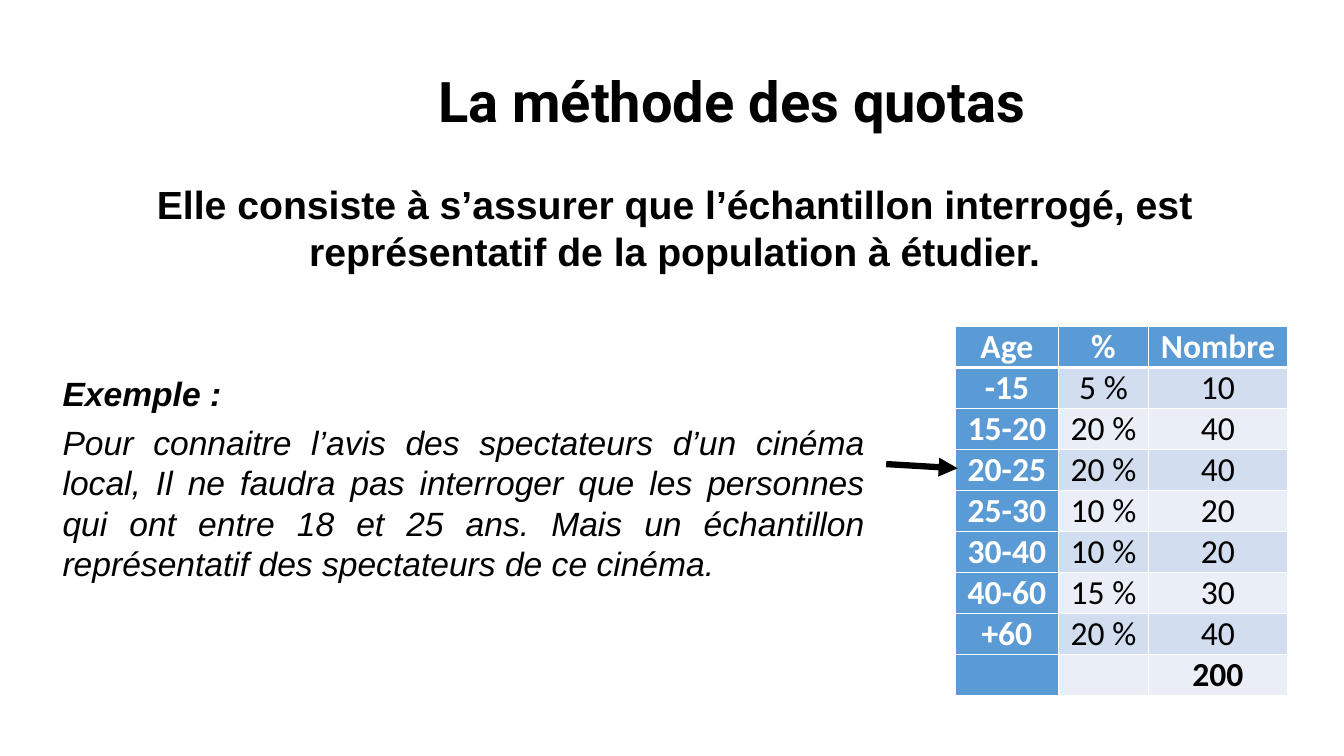
from lxml import etree
from pptx import Presentation
from pptx import util as u
from pptx.dml.color import RGBColor
from pptx.enum import shapes, text
from pptx.oxml.ns import qn

PX = 9525
BLACK, WHITE, BLUE = "000000", "FFFFFF", "5B9BD5"
BANDS = ["D2DEEF", "EAEFF7"]


def color(value):
    return RGBColor.from_string(value)


def write(paragraph, wording, alignment, font_color, **formats):
    paragraph.alignment = alignment
    run = paragraph.add_run()
    run.text = wording
    run.font.color.rgb = color(font_color)
    for name, value in formats.items():
        setattr(run.font, name, value)


presentation = Presentation()
presentation.slide_width = 1280 * PX
presentation.slide_height = 720 * PX
slide = presentation.slides.add_slide(presentation.slide_layouts[1])
center, justify = text.PP_ALIGN.CENTER, text.PP_ALIGN.JUSTIFY
middle = text.MSO_ANCHOR.MIDDLE

title = slide.shapes.title
definition = slide.shapes.add_textbox(0, 0, PX, PX)
example = slide.placeholders[1]
boxes = [
    (title, (214, 59, 979, 74), text.MSO_ANCHOR.TOP, 5),
    (definition, (92, 166, 1101, 132), middle, 36),
    (example, (50, 350, 783, 211), middle, 5),
]
for shape, place, anchor, bottom in boxes:
    shape.left, shape.top, shape.width, shape.height = [n * PX for n in place]
    frame = shape.text_frame
    formats = {"word_wrap": True, "vertical_anchor": anchor,
               "margin_bottom": bottom * PX, "auto_size": text.MSO_AUTO_SIZE.NONE}
    for name, value in formats.items():
        setattr(frame, name, value)

write(title.text_frame.paragraphs[0], "La méthode des quotas ", center, BLACK,
      name="Roboto", size=u.Pt(40), bold=True)
write(definition.text_frame.paragraphs[0],
      "Elle consiste à s’assurer que l’échantillon interrogé, "
      "est représentatif de la population à étudier.",
      center, BLACK, name="Arial", size=u.Pt(28), bold=True)

example_texts = [
    ("Exemple :", True, 0),
    ("Pour connaitre l’avis des spectateurs d’un cinéma local, "
     "Il ne faudra pas interroger que les personnes qui ont entre 18 et 25 ans. "
     "Mais un échantillon représentatif des spectateurs de ce cinéma.", False, 6),
]
example.text_frame.add_paragraph()
for paragraph, (wording, bold, before) in zip(example.text_frame.paragraphs, example_texts):
    properties = paragraph._p.get_or_add_pPr()
    properties.set("marL", "0")
    properties.set("indent", "0")
    etree.SubElement(properties, qn("a:buNone"))
    paragraph.space_before = u.Pt(before)
    write(paragraph, wording, justify, BLACK,
          name="Arial", size=u.Pt(24), bold=bold, italic=True)

quotas = [
    ("Age", "%", "Nombre"),
    ("-15", "5 %", "10"),
    ("15-20", "20 %", "40"),
    ("20-25", "20 %", "40"),
    ("25-30", "10 %", "20"),
    ("30-40", "10 %", "20"),
    ("40-60", "15 %", "30"),
    ("+60", "20 %", "40"),
    ("", "", "200"),
]
column_widths = [98, 86, 132]
row_height = 38
table = slide.shapes.add_table(
    len(quotas), len(column_widths), 910 * PX, 311 * PX,
    sum(column_widths) * PX, len(quotas) * row_height * PX).table
for column, width in zip(table.columns, column_widths):
    column.width = width * PX
for row_index, values in enumerate(quotas):
    table.rows[row_index].height = row_height * PX
    for column_index, value in enumerate(values):
        cell = table.cell(row_index, column_index)
        heading = row_index == 0 or column_index == 0
        total = row_index == len(quotas) - 1
        margins = {"margin_left": 7, "margin_right": 7, "margin_top": 0, "margin_bottom": 0}
        for name, margin in margins.items():
            setattr(cell, name, margin * PX)
        cell_properties = cell._tc.get_or_add_tcPr()
        for side in "LRTB":
            thick = (row_index, side) in [(0, "B"), (1, "T")]
            border = etree.SubElement(cell_properties, qn("a:ln" + side),
                                      w=str(u.Pt(3 if thick else 1)))
            border_fill = etree.SubElement(border, qn("a:solidFill"))
            etree.SubElement(border_fill, qn("a:srgbClr"), val=WHITE)
        cell.fill.solid()
        cell.fill.fore_color.rgb = color(BLUE if heading else BANDS[(row_index - 1) % 2])
        if value:
            write(cell.text_frame.paragraphs[0], value, center, WHITE if heading else BLACK,
                  name="Calibri", size=u.Pt(24), bold=heading or total)

arrow = slide.shapes.add_connector(
    shapes.MSO_CONNECTOR.STRAIGHT, 844 * PX, 442 * PX, 912 * PX, 446 * PX)
arrow.line.color.rgb = color(BLACK)
arrow.line.width = u.Pt(4.5)
etree.SubElement(arrow.line._get_or_add_ln(), qn("a:tailEnd"), type="triangle")
etree.SubElement(arrow._element.spPr, qn("a:effectLst"))

presentation.save("out.pptx")
